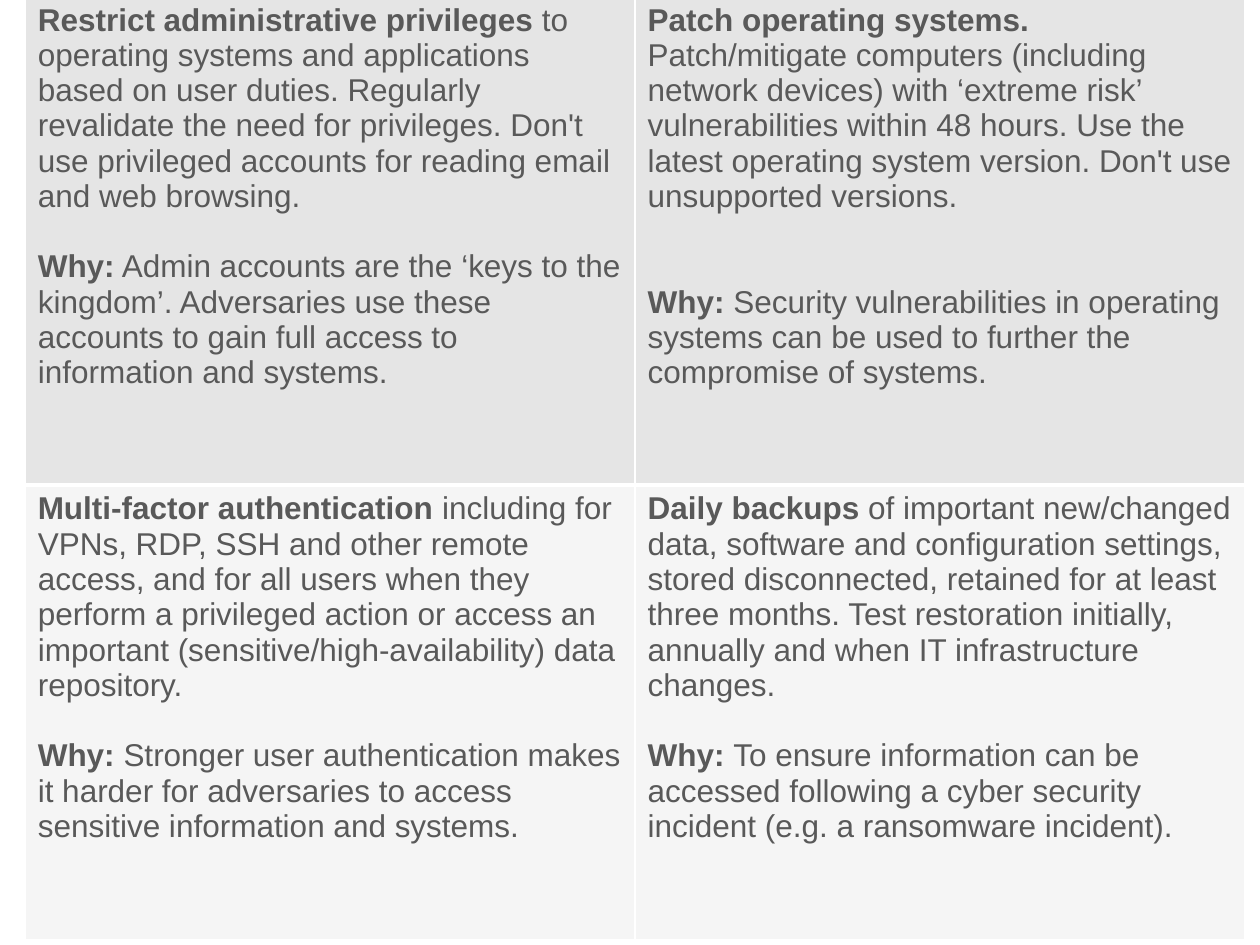
import pptx
import pptx.dml.color
import pptx.oxml
import pptx.util
from pptx.oxml.ns import nsdecls

Inches = pptx.util.Inches
Pt = pptx.util.Pt

TEXT_FORMAT = {"name": "Arial", "size": Pt(18)}
TEXT_COLOR = "595959"
BORDER_COLOR = "FFFFFF"
LINE_HEIGHT = 20.1  # points, one line of 18 pt text

COLUMN_WIDTH = 4.84
ROW_HEIGHTS = [3.88, 3.61]
ROW_FILLS = ["E5E5E5", "F5F5F5"]
ROW_BORDERS = [
    {"L": 1, "R": 1, "T": 1, "B": 3},
    {"L": 1, "R": 1, "T": 3, "B": 1},
]

# Each cell: heading, its text, "why" label, its text, lines of gap between
CELLS = [
    [
        ("Restrict administrative privileges",
         " to operating systems and applications based on user duties. "
         "Regularly revalidate the need for privileges. Don't use privileged "
         "accounts for reading email and web browsing.",
         "Why:",
         " Admin accounts are the ‘keys to the kingdom’. Adversaries use these "
         "accounts to gain full access to information and systems.", 1),
        ("Patch operating systems.",
         " Patch/mitigate computers (including network devices) with ‘extreme "
         "risk’ vulnerabilities within 48 hours. Use the latest operating "
         "system version. Don't use unsupported versions.",
         "Why:",
         " Security vulnerabilities in operating systems can be used to "
         "further the compromise of systems.", 2),
    ],
    [
        ("Multi-factor authentication",
         " including for VPNs, RDP, SSH and other remote access, and for all "
         "users when they perform a privileged action or access an important "
         "(sensitive/high-availability) data repository.",
         "Why:",
         " Stronger user authentication makes it harder for adversaries to "
         "access sensitive information and systems.", 1),
        ("Daily backups ",
         "of important new/changed data, software and configuration settings, "
         "stored disconnected, retained for at least three months. Test "
         "restoration initially, annually and when IT infrastructure changes.",
         "Why: ",
         "To ensure information can be accessed following a cyber security "
         "incident (e.g. a ransomware incident).", 1),
    ],
]


def color(hex_string):
    return pptx.dml.color.RGBColor.from_string(hex_string)


def add_run(paragraph, text, bold):
    run = paragraph.add_run()
    run.text = text
    for name, value in {**TEXT_FORMAT, "bold": bold}.items():
        setattr(run.font, name, value)
    run.font.color.rgb = color(TEXT_COLOR)


def fill_paragraph(paragraph, label, text):
    add_run(paragraph, label, True)
    add_run(paragraph, text, False)


def set_borders(cell, widths):
    properties = cell._tc.get_or_add_tcPr()
    for index, (side, width) in enumerate(widths.items()):
        border = pptx.oxml.parse_xml(
            f'<a:ln{side} {nsdecls("a")} w="{Pt(width)}"><a:solidFill>'
            f'<a:srgbClr val="{BORDER_COLOR}"/></a:solidFill></a:ln{side}>')
        properties.insert(index, border)


def fill_cell(cell, content, fill, borders):
    heading, text, why_label, why_text, gap_lines = content
    cell.fill.solid()
    cell.fill.fore_color.rgb = color(fill)
    set_borders(cell, borders)
    fill_paragraph(cell.text_frame.paragraphs[0], heading, text)
    why_paragraph = cell.text_frame.add_paragraph()
    why_paragraph.space_before = Pt(gap_lines * LINE_HEIGHT)
    fill_paragraph(why_paragraph, why_label, why_text)


def add_strategy_table(slide):
    table = slide.shapes.add_table(
        len(CELLS), len(CELLS[0]), Inches(0.2), Inches(-0.03),
        Inches(2 * COLUMN_WIDTH), Inches(sum(ROW_HEIGHTS))).table
    table.first_row = False
    table.horz_banding = False
    for column in table.columns:
        column.width = Inches(COLUMN_WIDTH)
    for row_index, contents in enumerate(CELLS):
        table.rows[row_index].height = Inches(ROW_HEIGHTS[row_index])
        for column_index, content in enumerate(contents):
            fill_cell(table.cell(row_index, column_index), content,
                      ROW_FILLS[row_index], ROW_BORDERS[row_index])


def main():
    presentation = pptx.Presentation()
    presentation.slide_width = Inches(10)
    presentation.slide_height = Inches(7.5)
    slide = presentation.slides.add_slide(presentation.slide_layouts[6])
    add_strategy_table(slide)
    presentation.save("out.pptx")


if __name__ == "__main__":
    main()
